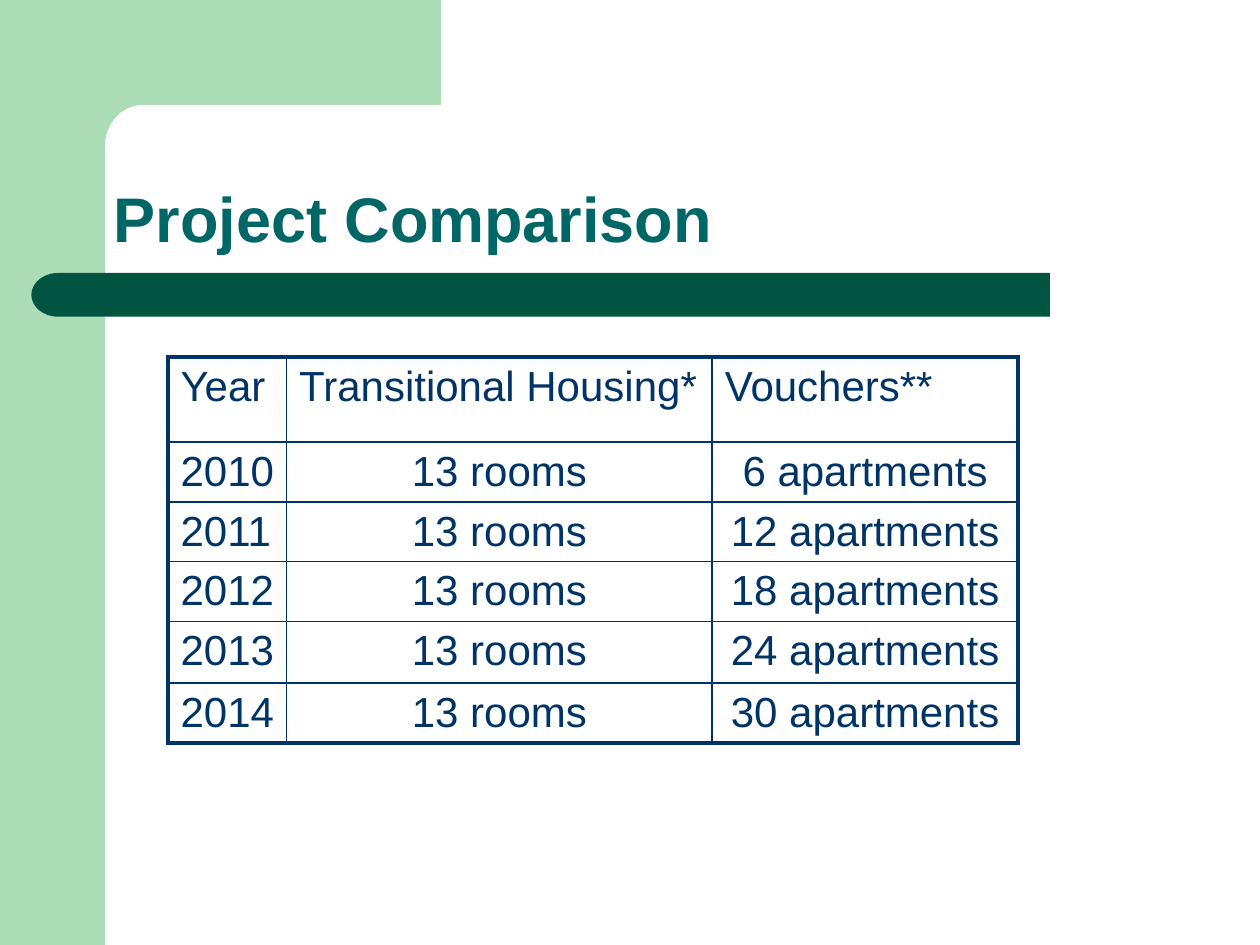
from dataclasses import dataclass
from math import cos, pi, sin

from lxml.etree import SubElement
from pptx import Presentation
from pptx.dml.color import RGBColor
from pptx.enum.shapes import MSO_SHAPE
from pptx.enum.text import MSO_ANCHOR, MSO_AUTO_SIZE, PP_ALIGN
from pptx.oxml.ns import qn
from pptx.util import Pt


@dataclass(frozen=True)
class Theme:
    """Colours, font and type sizes of the slide."""
    font: str = "Arial"
    mint: str = "ADDDB7"
    forest: str = "015440"
    teal: str = "006666"
    navy: str = "003366"
    title_size: int = 36
    table_size: int = 24
    outer_line: float = 2.25
    inner_line: float = 1


THEME = Theme()

HEADERS = ["Year", "Transitional Housing*", "Vouchers**"]
FIRST_YEAR = 2010
ROOMS = 13
APARTMENTS = [6, 12, 18, 24, 30]
COL_WIDTHS = [67.8, 243.2, 174.8]
ROW_HEIGHTS = [48.6, 34.2, 34.2, 34.2, 35.2, 34.2]


def paint(s, color):
    """Give a shape a plain fill without line or shadow."""
    s.fill.solid()
    s.fill.fore_color.rgb = RGBColor.from_string(color)
    s.line.fill.background()
    s.shadow.inherit = False


def style_text(p, size, color, bold=False):
    """Format the runs of a paragraph."""
    for r in p.runs:
        r.font.name = THEME.font
        r.font.size = Pt(size)
        r.font.bold = bold
        r.font.color.rgb = RGBColor.from_string(color)


def add_frame(slide, left, top, width, height):
    """Draw the side band and the top band with its rounded inner corner."""
    band, overlap, rx, ry = 60, 36, 21.6, 23.6
    side = slide.shapes.add_shape(
        MSO_SHAPE.RECTANGLE, Pt(left), Pt(top), Pt(band), Pt(height))
    paint(side, THEME.mint)

    steps = 16
    angles = [pi / 2 * i / steps for i in range(steps + 1)]
    arc = [(left + band + rx * (1 - sin(a)), top + band + ry * (1 - cos(a)))
           for a in angles]
    points = [(left + width, top), (left + width, top + band), *arc,
              (left + band, top + 92), (left + overlap, top + 92)]
    builder = slide.shapes.build_freeform(
        Pt(left + overlap), Pt(top), scale=1.0)
    builder.add_line_segments([(Pt(x), Pt(y)) for x, y in points], close=True)
    paint(builder.convert_to_shape(), THEME.mint)


def add_bar(slide, left, top, width, height):
    """Draw the dark rule with its rounded left end."""
    cap = 30.6
    bar = slide.shapes.add_shape(
        MSO_SHAPE.RECTANGLE, Pt(left + cap), Pt(top), Pt(width - cap), Pt(height))
    end = slide.shapes.add_shape(
        MSO_SHAPE.FLOWCHART_DELAY, Pt(left), Pt(top), Pt(cap), Pt(height))
    end._element.spPr.find(qn("a:xfrm")).set("flipH", "1")
    for s in (bar, end):
        paint(s, THEME.forest)


def add_title(slide, left, top, width, height):
    """Fill and place the title placeholder."""
    title = slide.shapes.title
    title.left, title.top = Pt(left), Pt(top)
    title.width, title.height = Pt(width), Pt(height)
    tf = title.text_frame
    tf.text = "Project Comparison"
    tf.word_wrap = True
    tf.auto_size = MSO_AUTO_SIZE.NONE
    tf.vertical_anchor = MSO_ANCHOR.BOTTOM
    tf.margin_left = Pt(5)
    p = tf.paragraphs[0]
    p.alignment = PP_ALIGN.LEFT
    p.line_spacing = 0.9
    style_text(p, THEME.title_size, THEME.teal, bold=True)


def set_borders(cell, outer):
    """Draw the four cell borders, thicker on the outer sides."""
    tc_pr = cell._tc.get_or_add_tcPr()
    for side in "LRTB":
        width = THEME.outer_line if outer[side] else THEME.inner_line
        ln = SubElement(tc_pr, qn(f"a:ln{side}"), w=str(Pt(width)))
        fill = SubElement(ln, qn("a:solidFill"))
        SubElement(fill, qn("a:srgbClr"), val=THEME.navy)


def add_comparison(slide, left, top, width, height):
    """Add the table of rooms and apartments by year."""
    rows = [HEADERS] + [
        [str(FIRST_YEAR + i), f"{ROOMS} rooms", f"{n} apartments"]
        for i, n in enumerate(APARTMENTS)]
    last_row, last_col = len(rows) - 1, len(HEADERS) - 1
    table = slide.shapes.add_table(
        len(rows), len(HEADERS), Pt(left), Pt(top), Pt(width), Pt(height)).table
    table.first_row = table.horz_banding = False
    for col, share in zip(table.columns, COL_WIDTHS):
        col.width = Pt(width * share / sum(COL_WIDTHS))
    for row, share in zip(table.rows, ROW_HEIGHTS):
        row.height = Pt(height * share / sum(ROW_HEIGHTS))
    for i, texts in enumerate(rows):
        for j, text in enumerate(texts):
            cell = table.cell(i, j)
            cell.text = text
            set_borders(cell, {"L": j == 0, "R": j == last_col,
                               "T": i == 0, "B": i == last_row})
            cell.fill.background()
            p = cell.text_frame.paragraphs[0]
            p.alignment = PP_ALIGN.CENTER if i and j else PP_ALIGN.LEFT
            style_text(p, THEME.table_size, THEME.navy)


def main():
    """Build the slide and save it."""
    prs = Presentation()
    prs.slide_width, prs.slide_height = Pt(720), Pt(540)
    slide = prs.slides.add_slide(prs.slide_layouts[5])
    add_frame(slide, 0, 0, 252, 540)
    add_bar(slide, 18, 156, 582, 25)
    add_title(slide, 60, 60, 624, 90)
    add_comparison(slide, 96, 204, sum(COL_WIDTHS), sum(ROW_HEIGHTS))
    prs.save("out.pptx")


if __name__ == "__main__":
    main()
